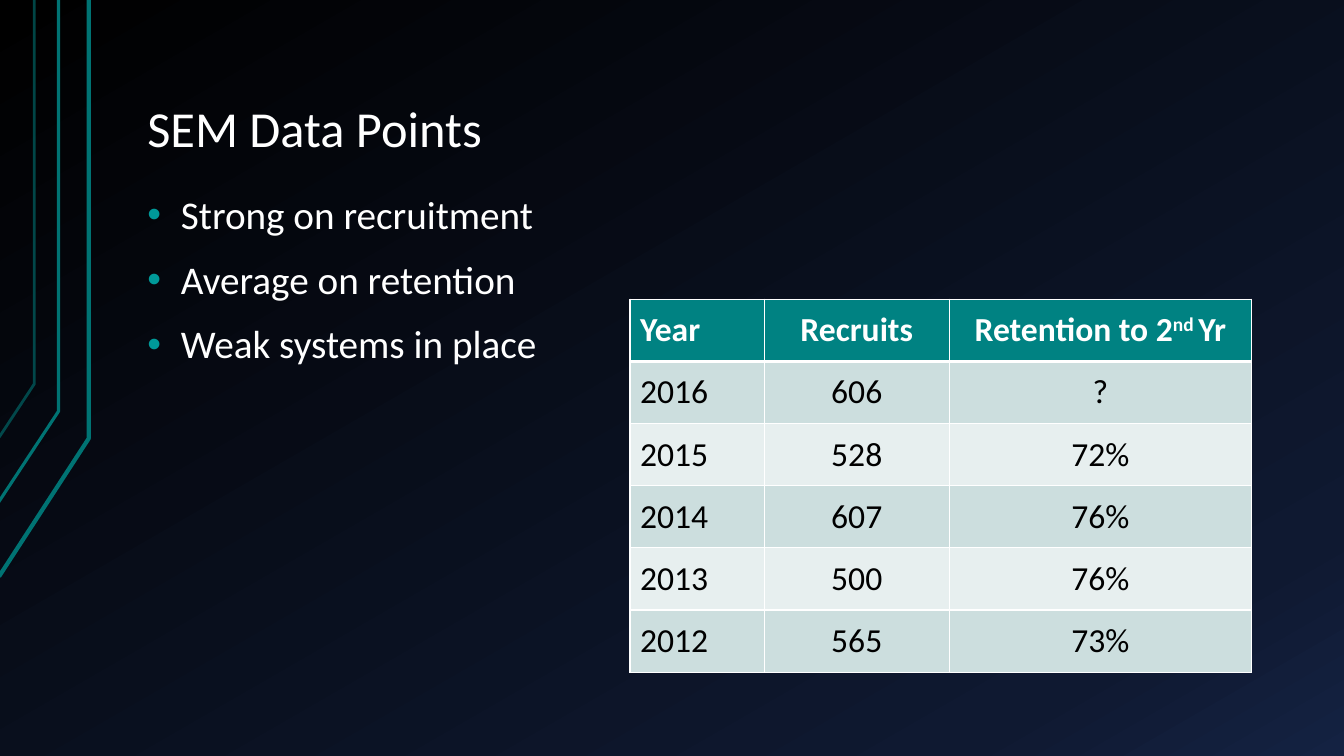
import pptx
import pptx.dml.color
import pptx.enum.text
import pptx.oxml
import pptx.oxml.ns
import pptx.util
from lxml import etree

Pt = pptx.util.Pt
ALIGN = pptx.enum.text.PP_ALIGN
ANCHOR = pptx.enum.text.MSO_ANCHOR
qn = pptx.oxml.ns.qn

# Content
TITLE = "SEM Data Points"
POINTS = ["Strong on recruitment", "Average on retention", "Weak systems in place"]
HEADER = ["Year", "Recruits", [("Retention to 2", 0), ("nd ", 30), ("Yr", 0)]]
RESULTS = [
    ["2016", "606", "?"],
    ["2015", "528", "72%"],
    ["2014", "607", "76%"],
    ["2013", "500", "76%"],
    ["2012", "565", "73%"],
]

# Look
FONT = "Calibri"
WHITE, BLACK, TEAL = "FFFFFF", "000000", "007373"
BULLET, HEADER_FILL, BANDS = "009999", "008282", ["CCDEDE", "E7EFEF"]
GRADIENT = [(0, "000000"), (85, "0F1931"), (100, "142242")]
GRADIENT_ANGLE = 60
# Each rail: corner points, line width, opacity in percent
RAILS = [
    ([(-0.7, 411.8), (63.4, 313.2), (63.4, 0)], 3, 100),
    ([(-1.4, 359.3), (41.8, 293.8), (41.8, 0)], 2.25, 100),
    ([(-0.7, 312.5), (24.5, 274.3), (24.5, 0)], 2, 60),
]
TITLE_BOX = (95.8, 21.6, 815.8, 96.5)
BODY_BOX = (95.8, 134.6, 399.6, 351.4)
TABLE_LEFT, TABLE_TOP, ROW_HEIGHT = 450, 213.8, 44.4
COLUMNS = [96, 132, 216]


def rgb(value):
    return pptx.dml.color.RGBColor.from_string(value)


def add_xml(parent, tag, **attributes):
    return etree.SubElement(parent, qn(tag), attributes)


def write(para, text, size, color, bold=False, align=ALIGN.LEFT, raised=0):
    """Append one formatted run; raised is the superscript offset in percent."""
    para.alignment = align
    span = para.add_run()
    span.text = text
    span.font.name = FONT
    span.font.size = Pt(size)
    span.font.bold = bold
    span.font.color.rgb = rgb(color)
    if raised:
        span.font._element.set("baseline", str(raised * 1000))


def place(box, bounds, anchor):
    box.left, box.top, box.width, box.height = map(Pt, bounds)
    frame = box.text_frame
    frame.word_wrap = True
    frame.auto_size = pptx.enum.text.MSO_AUTO_SIZE.NONE
    frame.vertical_anchor = anchor
    frame.margin_left = frame.margin_right = Pt(9.4)
    frame.margin_top = frame.margin_bottom = Pt(5)
    return frame


def add_bullet(para):
    properties = para._p.get_or_add_pPr()
    properties.set("marL", str(Pt(24)))
    properties.set("indent", str(-Pt(24)))
    add_xml(add_xml(properties, "a:buClr"), "a:srgbClr", val=BULLET)
    add_xml(properties, "a:buFont", typeface="Arial")
    add_xml(properties, "a:buChar", char="•")


def add_borders(cell, widths):
    properties = cell._tc.get_or_add_tcPr()
    for side, width in zip("LRTB", widths):
        line = add_xml(properties, "a:ln" + side, w=str(Pt(width)))
        add_xml(add_xml(line, "a:solidFill"), "a:srgbClr", val=WHITE)


def paint_background(page):
    fill = page.background.fill
    fill.gradient()
    fill.gradient_angle = 360 - GRADIENT_ANGLE  # this property counts anticlockwise
    stops = page.background._cSld.find(".//" + qn("a:gsLst"))
    for stop in list(stops):
        stops.remove(stop)
    for position, color in GRADIENT:
        stop = add_xml(stops, "a:gs", pos=str(position * 1000))
        add_xml(stop, "a:srgbClr", val=color)


def add_rail(page, corners, width, opacity):
    start, *others = [(Pt(x), Pt(y)) for x, y in corners]
    builder = page.shapes.build_freeform(*start)
    builder.add_line_segments(others, close=False)
    rail = builder.convert_to_shape()
    rail.shadow.inherit = False
    rail.fill.background()
    rail.line.color.rgb = rgb(TEAL)
    rail.line.width = Pt(width)
    if opacity < 100:
        color = rail.line._ln.find(".//" + qn("a:srgbClr"))
        add_xml(color, "a:alpha", val=str(opacity * 1000))


def add_results(page):
    rows = [HEADER] + RESULTS
    table = page.shapes.add_table(
        len(rows), len(COLUMNS), Pt(TABLE_LEFT), Pt(TABLE_TOP),
        Pt(sum(COLUMNS)), Pt(ROW_HEIGHT * len(rows))).table
    for column, width in zip(table.columns, COLUMNS):
        column.width = Pt(width)
    for r, values in enumerate(rows):
        table.rows[r].height = Pt(ROW_HEIGHT)
        is_header = r == 0
        for c, value in enumerate(values):
            cell = table.cell(r, c)
            add_borders(cell, [1, 1, 3 if r == 1 else 1, 3 if is_header else 1])
            cell.fill.solid()
            cell.fill.fore_color.rgb = rgb(HEADER_FILL if is_header else BANDS[(r - 1) % 2])
            cell.vertical_anchor = ANCHOR.MIDDLE
            pieces = [(value, 0)] if isinstance(value, str) else value
            for text, raised in pieces:
                write(cell.text_frame.paragraphs[0], text, 24,
                      WHITE if is_header else BLACK, bold=is_header,
                      align=ALIGN.CENTER if c else ALIGN.LEFT, raised=raised)


def main():
    deck = pptx.Presentation()
    deck.slide_width, deck.slide_height = Pt(960), Pt(540)
    page = deck.slides.add_slide(deck.slide_layouts[1])

    # Background and rails
    paint_background(page)
    for rail in RAILS:
        add_rail(page, *rail)

    # Title
    heading = place(page.shapes.title, TITLE_BOX, ANCHOR.BOTTOM).paragraphs[0]
    heading.line_spacing = 0.9
    write(heading, TITLE, 36, WHITE)

    # Bulleted list
    body = place(page.placeholders[1], BODY_BOX, ANCHOR.TOP)
    for number, point in enumerate(POINTS):
        para = body.add_paragraph() if number else body.paragraphs[0]
        para.line_spacing = 0.9
        para.space_before = Pt(16)
        add_bullet(para)
        write(para, point, 28, WHITE)

    # Table
    add_results(page)
    deck.save("out.pptx")


if __name__ == "__main__":
    main()
